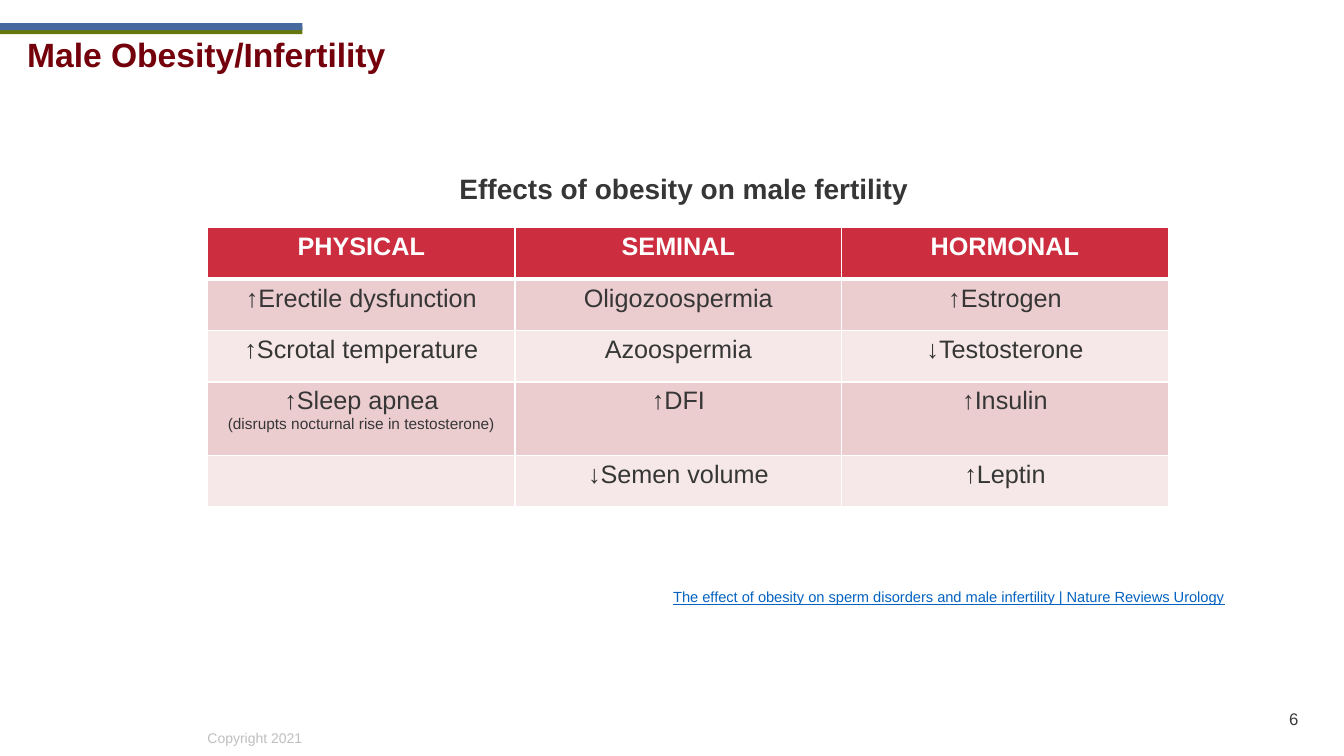
"""Build the slide on how obesity affects male fertility."""
from lxml.etree import SubElement
from pptx import Presentation
from pptx.dml.color import RGBColor
from pptx.enum.shapes import MSO_SHAPE
from pptx.enum.text import MSO_ANCHOR, PP_ALIGN
from pptx.oxml.ns import qn
from pptx.util import Pt


def paint(fmt, code):
    """Set a solid fill from a hex string."""
    fmt.solid()
    fmt.fore_color.rgb = RGBColor.from_string(code)


def write(para, words, size=18, color="363636", bold=False, line=False, align=PP_ALIGN.LEFT):
    """Add a run of text to a paragraph."""
    para.alignment = align
    run = para.add_run()
    run.text = words
    font = run.font
    font.name, font.size, font.bold, font.underline = "Arial", Pt(size), bold, line
    paint(font.fill, color)


deck = Presentation()
unit = 76200
deck.slide_width, deck.slide_height = 160 * unit, 90 * unit
slide = deck.slides.add_slide(deck.slide_layouts[6])
shapes = slide.shapes

for top, color in ((3.24, "65780B"), (2.76, "466A9F")):
    bar = shapes.add_shape(MSO_SHAPE.RECTANGLE, 0, round(top * unit), 36 * unit, round(0.84 * unit))
    bar.shadow.inherit = False
    paint(bar.fill, color)
    bar.line.fill.background()

cite = "The effect of obesity on sperm disorders and male infertility | Nature Reviews Urology"
texts = [
    ((23.52, 86.28, 13.8, 3.24), "Copyright 2021", False, dict(size=10, color="BFBFBF")),
    ((2.04, 3.48, 81, 6), "Male Obesity/Infertility", True, dict(size=24, color="73000A", bold=True)),
    ((145.08, 83.16, 10.68, 4.8), "6", True, dict(size=12, color="3B3B3B", align=PP_ALIGN.RIGHT)),
    ((78.96, 69.36, 77.4, 3.36), cite, True, dict(size=10.5, color="0563C1", line=True)),
    ((53.52, 19.8, 57.12, 5.28), "Effects of obesity on male fertility", False, dict(size=20, bold=True)),
]
for place, words, wrap, style in texts:
    frame = shapes.add_textbox(*(round(n * unit) for n in place)).text_frame
    frame.word_wrap = wrap
    if words == "6":
        frame.vertical_anchor = MSO_ANCHOR.MIDDLE
    write(frame.paragraphs[0], words, **style)

effects = [
    ("PHYSICAL", "SEMINAL", "HORMONAL"),
    ("↑Erectile dysfunction", "Oligozoospermia", "↑Estrogen"),
    ("↑Scrotal temperature", "Azoospermia", "↓Testosterone"),
    ("↑Sleep apnea\n(disrupts nocturnal rise in testosterone)", "↑DFI", "↑Insulin"),
    ("", "↓Semen volume", "↑Leptin"),
]
wide = (36.6, 38.88, 38.88)
high = (6.12, 6.12, 6.12, 8.76, 6.12)
place = (24.72, 27.12, sum(wide), sum(high))
table = shapes.add_table(len(high), len(wide), *(round(n * unit) for n in place)).table
for col, size in zip(table.columns, wide):
    col.width = round(size * unit)
for row, size in zip(table.rows, high):
    row.height = round(size * unit)

for r, names in enumerate(effects):
    for c, name in enumerate(names):
        cell = table.cell(r, c)
        props = cell._tc.get_or_add_tcPr()
        for side in "LRTB":
            thick = 3 if (r, side) in ((0, "B"), (1, "T")) else 1
            edge = SubElement(props, qn(f"a:ln{side}"), w=str(Pt(thick)))
            SubElement(SubElement(edge, qn("a:solidFill")), qn("a:srgbClr"), val="FFFFFF")
        paint(cell.fill, "CC2E40" if r == 0 else "ECCDCF" if r % 2 else "F6E8E8")
        if not name:
            continue
        para = cell.text_frame.paragraphs[0]
        main, _, note = name.partition("\n")
        write(para, main, color="363636" if r else "FFFFFF", bold=r == 0, align=PP_ALIGN.CENTER)
        if note:
            para.add_line_break()
            write(para, note, size=11, align=PP_ALIGN.CENTER)

deck.save("out.pptx")
